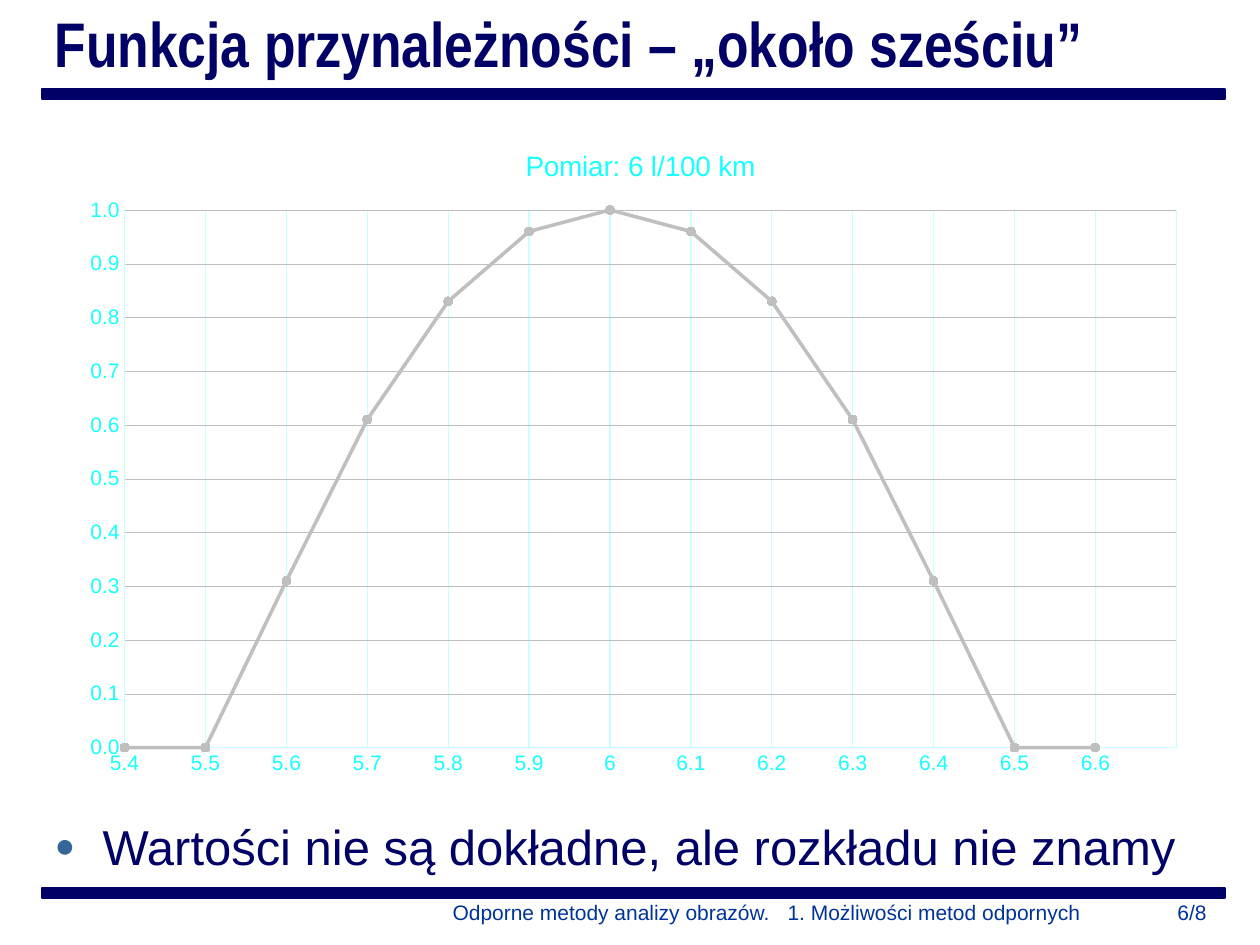
import lxml.etree
import pptx
import pptx.chart.data
import pptx.dml.color
import pptx.enum.chart
import pptx.enum.shapes
import pptx.enum.text
import pptx.oxml.ns
import pptx.util

PIXEL = 914400 / 126
COLORS = {
    "navy": "000066",
    "bullet": "336699",
    "footer": "003399",
    "label": "17FFFF",
    "axis": "C9FFFF",
    "series": "BFBFBF",
}
CATEGORIES = ["5.4", "5.5", "5.6", "5.7", "5.8", "5.9", "6",
              "6.1", "6.2", "6.3", "6.4", "6.5", "6.6", ""]
RISING = [0, 0, 0.31, 0.61, 0.83, 0.96]
MEMBERSHIP = RISING + [1] + RISING[::-1] + [None]


def pixels(*lengths):
    """Turn pixel lengths into EMU."""
    return [pptx.util.Emu(round(length * PIXEL)) for length in lengths]


def color(name):
    """Return a named colour."""
    return pptx.dml.color.RGBColor.from_string(COLORS[name])


def style_font(font, size, color_name, name="Arial", bold=False):
    """Set the face, size, weight and colour of a font."""
    font.name = name
    font.size = pptx.util.Pt(size)
    font.bold = bold
    font.color.rgb = color(color_name)


def style_line(line, color_name, width):
    """Set the colour and width of a line."""
    line.color.rgb = color(color_name)
    line.width = pptx.util.Pt(width)


def place(shape, box):
    """Move and size a shape to a pixel box."""
    shape.left, shape.top, shape.width, shape.height = pixels(*box)


def add_child(parent, tag, **attributes):
    """Append an XML element with the given attributes."""
    child = lxml.etree.SubElement(parent, pptx.oxml.ns.qn(tag))
    for key, value in attributes.items():
        child.set(key, str(value))
    return child


def add_rule(slide, box):
    """Draw a horizontal navy bar."""
    bar = slide.shapes.add_shape(pptx.enum.shapes.MSO_SHAPE.RECTANGLE, *pixels(*box))
    bar.shadow.inherit = False
    bar.fill.solid()
    bar.fill.fore_color.rgb = color("navy")
    style_line(bar.line, "navy", 0.75)


def add_header(slide, box, text):
    """Fill the title placeholder and draw the bar under it."""
    left, top, width, height = box
    title = slide.shapes.title
    place(title, box)
    frame = title.text_frame
    frame.text = text
    frame.auto_size = pptx.enum.text.MSO_AUTO_SIZE.NONE
    frame.vertical_anchor = pptx.enum.text.MSO_ANCHOR.BOTTOM
    paragraph = frame.paragraphs[0]
    paragraph.alignment = pptx.enum.text.PP_ALIGN.LEFT
    paragraph.line_spacing = 0.7
    style_font(paragraph.runs[0].font, 36, "navy", "Arial Narrow", True)
    add_rule(slide, (left, top + height + 5, width, 10))


def add_body(slide, box, text):
    """Fill the body placeholder with one bulleted line."""
    body = slide.placeholders[1]
    place(body, box)
    frame = body.text_frame
    frame.text = text
    frame.auto_size = pptx.enum.text.MSO_AUTO_SIZE.NONE
    paragraph = frame.paragraphs[0]
    paragraph.space_before = pptx.util.Pt(5.6)
    style_font(paragraph.runs[0].font, 28, "navy")
    properties = paragraph._p.get_or_add_pPr()
    indent = pixels(48)[0]
    properties.set("marL", str(indent))
    properties.set("indent", str(-indent))
    add_child(add_child(properties, "a:buClr"), "a:srgbClr", val=COLORS["bullet"])
    add_child(properties, "a:buSzPct", val=70000)
    add_child(properties, "a:buFont", typeface="Arial")
    add_child(properties, "a:buChar", char="●")


def add_footer_text(slide, box, parts):
    """Place right-aligned footer parts, parted by a widened space."""
    frame = slide.shapes.add_textbox(*pixels(*box)).text_frame
    frame.word_wrap = True
    frame.vertical_anchor = pptx.enum.text.MSO_ANCHOR.MIDDLE
    paragraph = frame.paragraphs[0]
    paragraph.alignment = pptx.enum.text.PP_ALIGN.RIGHT
    for index, part in enumerate(parts):
        if index:
            gap = paragraph.add_run()
            gap.text = " "
            gap._r.get_or_add_rPr().set("spc", "667")
        paragraph.add_run().text = part
    for run in paragraph.runs:
        style_font(run.font, 12, "footer")


def add_footer(slide, box):
    """Draw the lower bar with the section name and page number."""
    left, top, width, height = box
    add_rule(slide, (left, top, width, 10))
    add_footer_text(slide, (left - 10, top + 15, 1061, height - 15),
                    ["Odporne metody analizy obrazów.", "1. Możliwości metod odpornych"])
    add_footer_text(slide, (left + 1093, top + 15, 84, height - 15), ["6/8"])


def set_layout(parent, position, **fractions):
    """Give a chart part a manual layout in fractions of the chart."""
    for old in parent.findall(pptx.oxml.ns.qn("c:layout")):
        parent.remove(old)
    layout = add_child(parent, "c:layout")
    parent.insert(position, layout)
    manual = add_child(layout, "c:manualLayout")
    if "w" in fractions:
        add_child(manual, "c:layoutTarget", val="inner")
    for key in ("x", "y"):
        add_child(manual, f"c:{key}Mode", val="edge")
    for key, value in fractions.items():
        add_child(manual, f"c:{key}", val=value)


def style_axis(axis, grid_color, grid_width):
    """Format the labels, ticks and gridlines of an axis."""
    axis.major_tick_mark = pptx.enum.chart.XL_TICK_MARK.NONE
    axis.minor_tick_mark = pptx.enum.chart.XL_TICK_MARK.NONE
    axis.tick_labels.number_format = "#,##0.0"
    axis.tick_labels.number_format_is_linked = False
    style_font(axis.tick_labels.font, 12, "label")
    axis.has_major_gridlines = True
    style_line(axis.major_gridlines.format.line, grid_color, grid_width)


def add_membership_chart(slide, box):
    """Add the line chart of the membership function."""
    data = pptx.chart.data.CategoryChartData()
    data.categories = CATEGORIES
    data.add_series("Series 1", MEMBERSHIP)
    chart = slide.shapes.add_chart(
        pptx.enum.chart.XL_CHART_TYPE.LINE_MARKERS, *pixels(*box), data).chart
    style_font(chart.font, 10, "label")
    chart.has_legend = False
    chart.has_title = True
    chart.chart_title.text_frame.text = "Pomiar: 6 l/100 km"
    title_run = chart.chart_title.text_frame.paragraphs[0].runs[0]
    style_font(title_run.font, 16, "label")
    chart.chart_title.include_in_layout = False
    set_layout(chart.chart_title._element, 1, x=0.4, y=0.04)
    plot = chart.plots[0]
    plot.vary_by_categories = False
    set_layout(plot._element.getparent(), 0, x=0.05, y=0.14, w=0.93, h=0.8)

    style_axis(chart.category_axis, "axis", 0.75)
    style_line(chart.category_axis.format.line, "axis", 0.75)
    value_axis = chart.value_axis
    style_axis(value_axis, "series", 0.1)
    value_axis.format.line.fill.background()
    value_axis.minimum_scale = 0
    value_axis.maximum_scale = 1
    value_axis.major_unit = 0.1
    crossing = add_child(value_axis._element, "c:crossBetween", val="midCat")
    value_axis._element.find(pptx.oxml.ns.qn("c:majorUnit")).addprevious(crossing)

    series = plot.series[0]
    series.smooth = False
    style_line(series.format.line, "series", 2)
    series.marker.style = pptx.enum.chart.XL_MARKER_STYLE.CIRCLE
    series.marker.size = 5
    series.marker.format.fill.solid()
    series.marker.format.fill.fore_color.rgb = color("series")
    style_line(series.marker.format.line, "series", 0.75)


def main():
    """Build and save the presentation."""
    presentation = pptx.Presentation()
    presentation.slide_width, presentation.slide_height = pixels(1260, 945)
    slide = presentation.slides.add_slide(presentation.slide_layouts[1])
    add_header(slide, (42, 16, 1183, 68), "Funkcja przynależności – „około sześciu”")
    add_membership_chart(slide, (68, 116, 1131, 672))
    add_body(slide, (42, 810, 1183, 72), "Wartości nie są dokładne, ale rozkładu nie znamy")
    add_footer(slide, (42, 888, 1183, 34))
    presentation.save("out.pptx")


if __name__ == "__main__":
    main()
